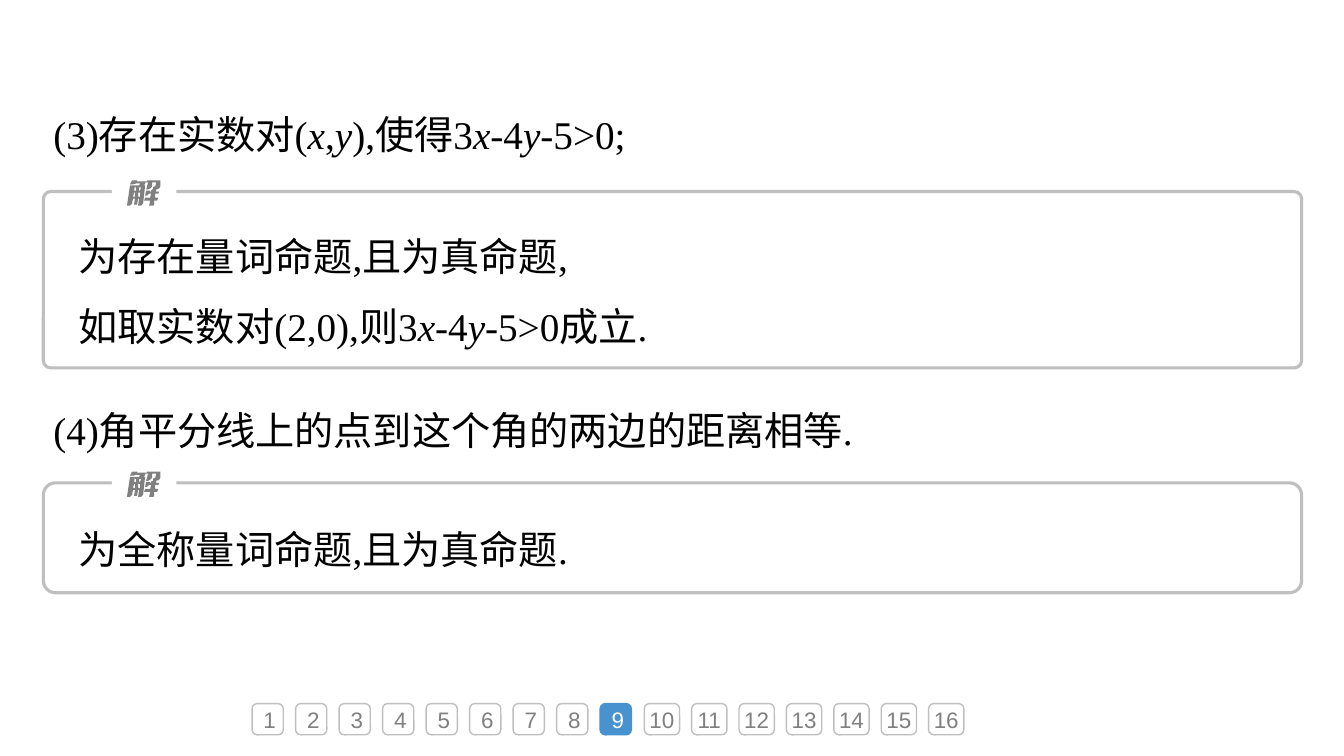
from itertools import groupby

from pptx import Presentation
from pptx.dml.color import RGBColor
from pptx.enum.shapes import MSO_SHAPE
from pptx.enum.text import MSO_ANCHOR, MSO_AUTO_SIZE, PP_ALIGN
from pptx.util import Inches, Pt

ROUNDED = MSO_SHAPE.ROUNDED_RECTANGLE
RECTANGLE = MSO_SHAPE.RECTANGLE
MIDDLE = MSO_ANCHOR.MIDDLE
FIT_TEXT = MSO_AUTO_SIZE.SHAPE_TO_FIT_TEXT
CENTER = PP_ALIGN.CENTER

BLACK = RGBColor(0x00, 0x00, 0x00)
WHITE = RGBColor(0xFF, 0xFF, 0xFF)
GRAY = RGBColor(0x80, 0x80, 0x80)
LIGHT_GRAY = RGBColor(0xBF, 0xBF, 0xBF)
BLUE = RGBColor(0x48, 0x93, 0xCF)

# Outlines of the label glyph 解, in hundredths of an inch
GLYPH_CONTOURS = [
    [(11, 12), (11, 16), (13, 16), (13, 12)],
    [(7, 12), (6, 16), (8, 16), (8, 12)],
    [(25, 9), (29, 9), (29, 11), (32, 11), (31, 13), (28, 13), (28, 17),
     (31, 17), (30, 20), (27, 20), (27, 24), (26, 25), (22, 25), (23, 20),
     (17, 20), (18, 17), (23, 17), (24, 13), (22, 13), (20, 15), (18, 15),
     (19, 10), (23, 10), (23, 11), (24, 11), (24, 10)],
    [(12, 7), (12, 10), (13, 10), (14, 7)],
    [(20, 0), (33, 0), (33, 6), (32, 8), (29, 9), (26, 9), (26, 7), (27, 6),
     (28, 6), (29, 2), (25, 2), (25, 6), (23, 8), (21, 9), (19, 9), (21, 2),
     (19, 2)],
    [(5, 0), (10, 0), (10, 1), (19, 1), (17, 5), (18, 5), (16, 23), (15, 24),
     (14, 25), (11, 25), (12, 18), (11, 18), (10, 24), (7, 24), (8, 18),
     (6, 18), (5, 23), (4, 24), (3, 25), (0, 25), (3, 5), (8, 5), (7, 10),
     (9, 10), (9, 7), (8, 7), (8, 5), (12, 5), (13, 3), (9, 3), (6, 4), (3, 4)],
]

presentation = Presentation()
presentation.slide_width = Inches(13.33)
presentation.slide_height = Inches(7.5)
slide = presentation.slides.add_slide(presentation.slide_layouts[6])


def add_text(left, top, width, height, lines):
    """Add a text box in which the variables x and y are italic."""
    box = slide.shapes.add_textbox(
        Inches(left), Inches(top), Inches(width), Inches(height))
    text_frame = box.text_frame
    text_frame.word_wrap = True
    text_frame.auto_size = FIT_TEXT
    for index, line in enumerate(lines):
        paragraph = text_frame.add_paragraph() if index else text_frame.paragraphs[0]
        paragraph.line_spacing = 1.5
        for is_variable, characters in groupby(line, lambda character: character in "xy"):
            run = paragraph.add_run()
            run.text = "".join(characters)
            run.font.name = "Times New Roman"
            run.font.size = Pt(28)
            run.font.italic = is_variable
            run.font.color.rgb = BLACK


def add_box(kind, left, top, width, height, fill=None, line=None, line_width=1):
    """Add a flat preset shape; a missing fill or line is left empty."""
    shape = slide.shapes.add_shape(
        kind, Inches(left), Inches(top), Inches(width), Inches(height))
    shape.shadow.inherit = False
    if fill is None:
        shape.fill.background()
    else:
        shape.fill.solid()
        shape.fill.fore_color.rgb = fill
    if line is None:
        shape.line.fill.background()
    else:
        shape.line.color.rgb = line
        shape.line.width = Pt(line_width)
    return shape


# Page numbers, with the current page highlighted
for number in range(1, 17):
    current = number == 9
    two_digits = number >= 10
    left = 6.39 + 0.47 * (number - 10) if two_digits else 2.5 + 0.4315 * (number - 1)
    button = add_box(ROUNDED, left, 6.98, 0.35 if two_digits else 0.31, 0.31,
                     BLUE if current else WHITE, BLUE if current else LIGHT_GRAY)
    text_frame = button.text_frame
    text_frame.vertical_anchor = MIDDLE
    if two_digits:
        text_frame.margin_left = text_frame.margin_right = 0
    text_frame.text = str(number)
    paragraph = text_frame.paragraphs[0]
    paragraph.alignment = CENTER
    font = paragraph.runs[0].font
    font.name = "Arial"
    font.size = Pt(16)
    font.color.rgb = WHITE if current else GRAY

# Questions, each with a framed solution:
# question, its top, frame top, frame height, corner, answer top, answer height, answer
exercises = [
    ("(3)存在实数对(x,y),使得3x-4y-5>0;", 0.81, 1.9, 1.75, 0.042, 2.02, 1.44,
     ["为存在量词命题,且为真命题,", "如取实数对(2,0),则3x-4y-5>0成立."]),
    ("(4)角平分线上的点到这个角的两边的距离相等.", 3.75, 4.79, 1.09, 0.111, 4.93, 0.73,
     ["为全称量词命题,且为真命题."]),
]
for (question, question_top, frame_top, frame_height, corner,
     answer_top, answer_height, answer) in exercises:
    add_text(0.43, question_top, 12.48, 0.73, [question])

    # Frame with a gap for the label
    frame = add_box(ROUNDED, 0.43, frame_top, 12.48, frame_height,
                    line=LIGHT_GRAY, line_width=2.25)
    frame.adjustments[0] = corner
    add_box(RECTANGLE, 1.11, frame_top - 0.12, 0.64, 0.24, WHITE)

    # Label glyph
    builder = slide.shapes.build_freeform(*GLYPH_CONTOURS[0][0], scale=Inches(0.01))
    for index, contour in enumerate(GLYPH_CONTOURS):
        if index:
            builder.move_to(*contour[0])
        builder.add_line_segments(contour[1:], close=True)
    glyph = builder.convert_to_shape(Inches(1.26), Inches(frame_top - 0.11))
    glyph.shadow.inherit = False
    glyph.fill.solid()
    glyph.fill.fore_color.rgb = GRAY
    glyph.line.fill.background()

    add_text(0.68, answer_top, 12.05, answer_height, answer)

presentation.save("out.pptx")
